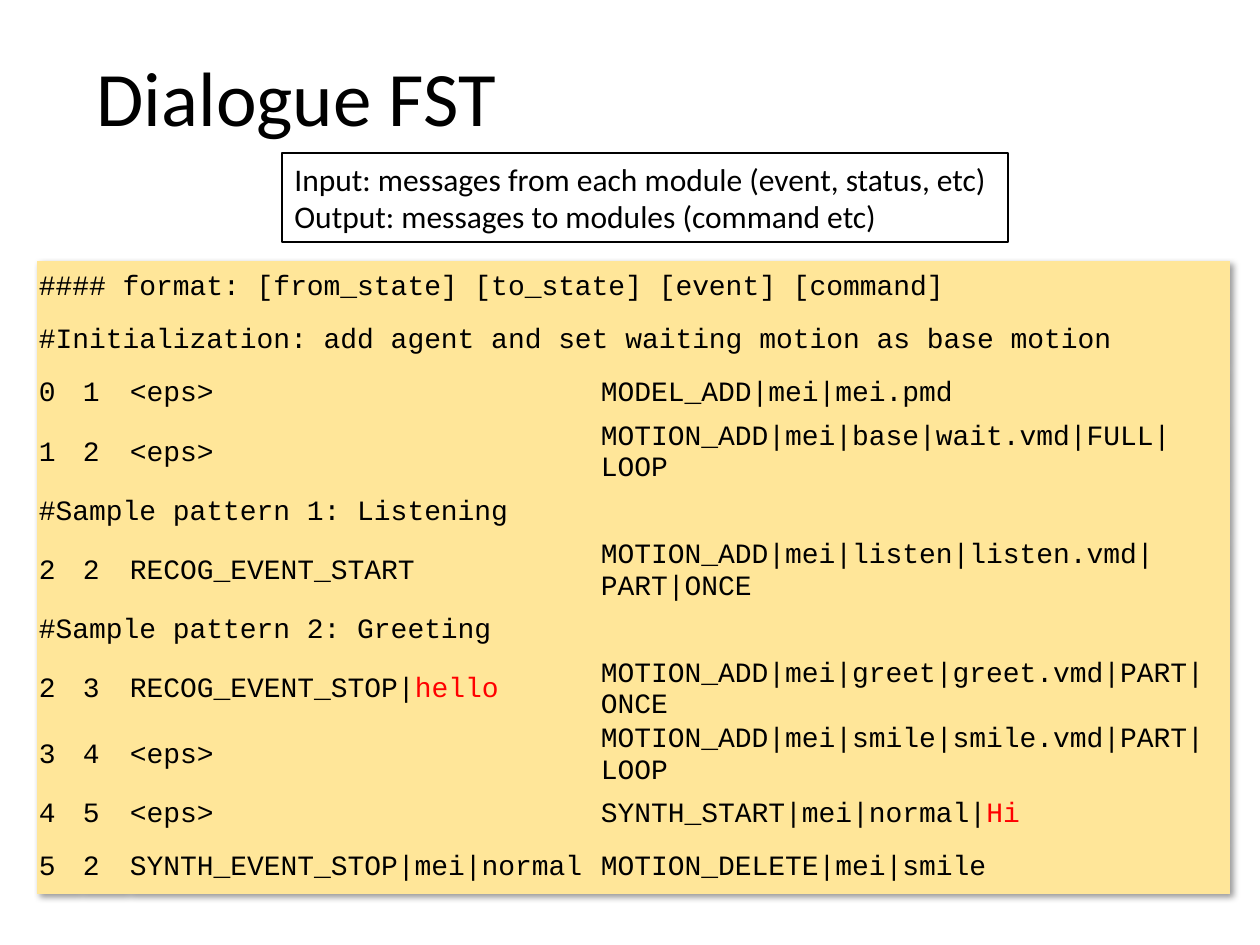
from dataclasses import dataclass

from lxml import etree
from pptx import Presentation
from pptx import util as u
from pptx.dml.color import RGBColor
from pptx.enum import shapes, text
from pptx.oxml import ns

SCALE = 914400 / 126
PLAIN = "{2D5ABB26-0587-4C30-8999-92F81FD0307C}"  # no style, no grid


@dataclass(frozen=True)
class Theme:
    ink: str = "000000"
    paper: str = "FFFFFF"
    sand: str = "FFE699"
    red: str = "FF0000"
    sans: str = "Calibri"
    mono: str = "Courier New"
    head: int = 44
    note: int = 18
    code: int = 16


# A "~" starts the part of a cell that is set in red.
ROWS = [
    ["#### format: [from_state] [to_state] [event] [command]"],
    ["#Initialization: add agent and set waiting motion as base motion"],
    ["0", "1", "<eps>", "MODEL_ADD|mei|mei.pmd"],
    ["1", "2", "<eps>", "MOTION_ADD|mei|base|wait.vmd|FULL|LOOP"],
    ["#Sample pattern 1: Listening", ""],
    ["2", "2", "RECOG_EVENT_START", "MOTION_ADD|mei|listen|listen.vmd|PART|ONCE"],
    ["#Sample pattern 2: Greeting", ""],
    ["2", "3", "RECOG_EVENT_STOP|~hello", "MOTION_ADD|mei|greet|greet.vmd|PART|ONCE"],
    ["3", "4", "<eps>", "MOTION_ADD|mei|smile|smile.vmd|PART|LOOP"],
    ["4", "5", "<eps>", "SYNTH_START|mei|normal|~Hi"],
    ["5", "2", "SYNTH_EVENT_STOP|mei|normal", "MOTION_DELETE|mei|smile"],
]
COLS = [44, 47, 471, 631]


def px(n):
    return u.Emu(round(n * SCALE))


def rgb(code):
    return RGBColor.from_string(code)


class Deck:
    def __init__(self, theme):
        self.theme = theme
        self.prs = Presentation()
        self.prs.slide_width, self.prs.slide_height = px(1260), px(945)
        self.slide = self.prs.slides.add_slide(self.prs.slide_layouts[5])

    def font(self, run, face, size, color):
        run.font.name = face
        run.font.size = u.Pt(size)
        run.font.color.rgb = rgb(color)

    def title(self, words, x, y, w, h):
        shape = self.slide.shapes.title
        shape.left, shape.top, shape.width, shape.height = map(px, (x, y, w, h))
        frame = shape.text_frame
        frame.text = words
        frame.vertical_anchor = text.MSO_ANCHOR.MIDDLE
        para = frame.paragraphs[0]
        para.alignment = text.PP_ALIGN.LEFT
        para.line_spacing = 0.9
        self.font(para.runs[0], self.theme.sans, self.theme.head, self.theme.ink)

    def box(self, lines, x, y, w, h):
        shape = self.slide.shapes.add_shape(
            shapes.MSO_SHAPE.RECTANGLE, *map(px, (x, y, w, h)))
        shape.shadow.inherit = False
        shape.fill.solid()
        shape.fill.fore_color.rgb = rgb(self.theme.paper)
        shape.line.color.rgb = rgb(self.theme.ink)
        shape.line.width = u.Pt(1)
        frame = shape.text_frame
        frame.word_wrap = True
        frame.text = "\n".join(lines)
        for para in frame.paragraphs:
            para.alignment = text.PP_ALIGN.LEFT
            self.font(para.runs[0], self.theme.sans, self.theme.note, self.theme.ink)

    def cell(self, cell, words):
        cell.fill.solid()
        cell.fill.fore_color.rgb = rgb(self.theme.sand)
        cell.vertical_anchor = text.MSO_ANCHOR.MIDDLE
        cell.margin_left = cell.margin_right = cell.margin_top = px(2)
        cell.margin_bottom = 0
        para = cell.text_frame.paragraphs[0]
        para.font.size = u.Pt(self.theme.code)
        if not words:
            return
        for part, color in zip(words.split("~"), (self.theme.ink, self.theme.red)):
            run = para.add_run()
            run.text = part
            self.font(run, self.theme.mono, self.theme.code, color)

    def table(self, rows, cols, x, y, step):
        """Place rows; in a short row the first cell spans the missing ones."""
        table = self.slide.shapes.add_table(
            len(rows), len(cols), px(x), px(y),
            px(sum(cols)), px(step * len(rows))).table
        table.first_row = table.horz_banding = False
        for col, wide in zip(table.columns, cols):
            col.width = px(wide)
        for r, row in enumerate(rows):
            table.rows[r].height = px(step)
            gap = len(cols) - len(row)
            if gap:
                table.cell(r, 0).merge(table.cell(r, gap))
            for c, words in enumerate(row):
                self.cell(table.cell(r, c + gap if c else 0), words)
        self.shade(table)

    def shade(self, table):
        """Drop the grid style and cast a soft shadow to the lower right."""
        props = table._tbl.tblPr
        props.find(ns.qn("a:tableStyleId")).text = PLAIN
        effect = etree.Element(ns.qn("a:effectLst"))
        cast = etree.SubElement(
            effect, ns.qn("a:outerShdw"), blurRad="50800", dist="38100",
            dir="2700000", algn="tl", rotWithShape="0")
        color = etree.SubElement(cast, ns.qn("a:srgbClr"), val=self.theme.ink)
        etree.SubElement(color, ns.qn("a:alpha"), val="40000")
        props.insert(0, effect)


def main():
    deck = Deck(Theme())
    deck.title("Dialogue FST", 84, 49, 1086, 105)
    deck.table(ROWS, COLS, 37, 261, 53)
    deck.box(["Input: messages from each module (event, status, etc)",
              "Output: messages to modules (command etc)"], 282, 153, 726, 89)
    deck.prs.save("out.pptx")


if __name__ == "__main__":
    main()
